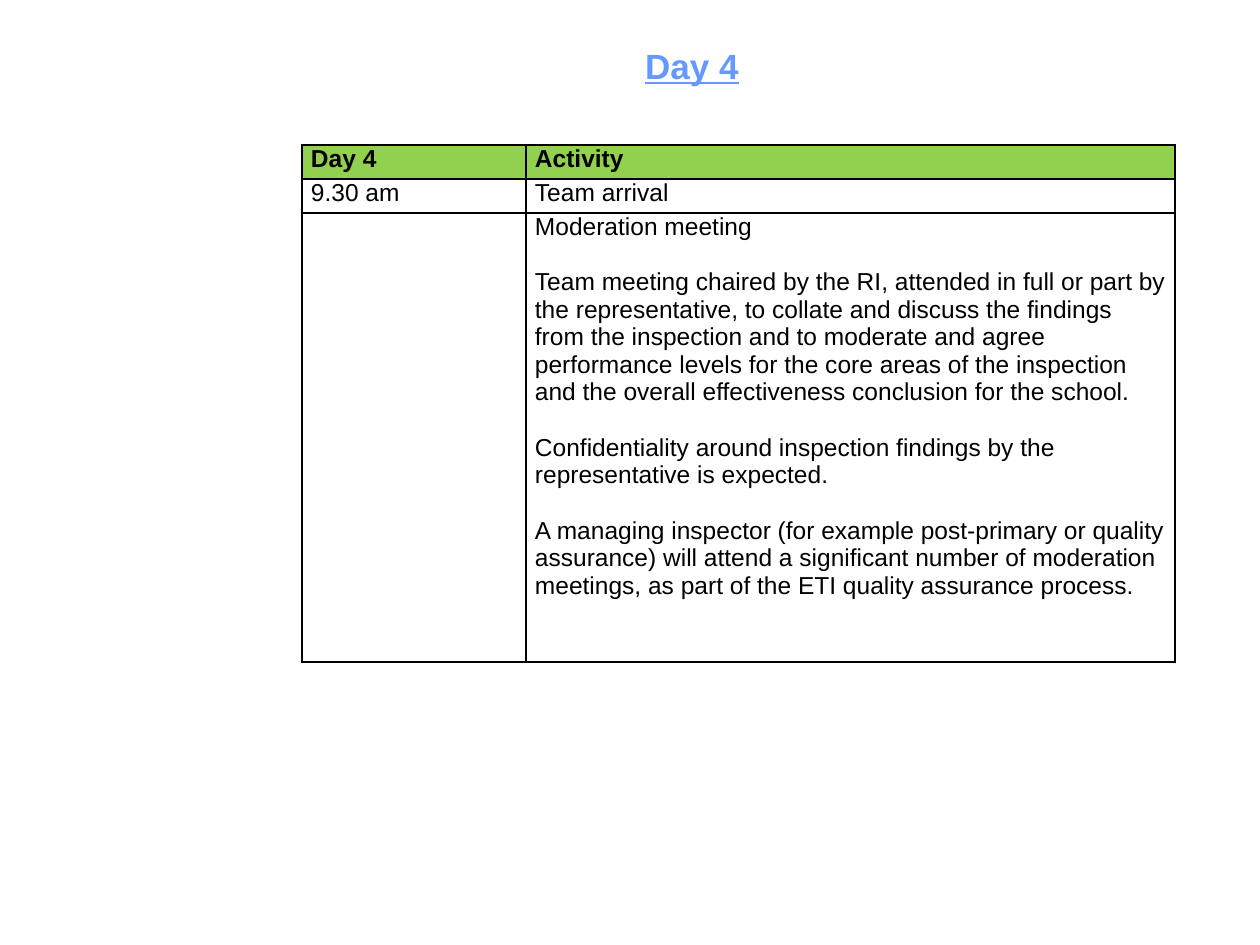
"""Build the Day 4 inspection timetable slide."""
import pptx
import pptx.dml.color
import pptx.enum.text
import pptx.oxml
import pptx.oxml.ns
import pptx.util

PX = 914400 // 126
TITLE = "Day 4"
TITLE_BOX = (241, 30, 902, 70)
TABLE_ORIGIN = (302, 145)
COLUMNS = (224, 649)
ROW_HEIGHTS = (34, 34, 449)
ROWS = [
    (["Day 4"], ["Activity"]),
    (["9.30 am"], ["Team arrival"]),
    ([], [
        "Moderation meeting",
        "Team meeting chaired by the RI, attended in full or part by the "
        "representative, to collate and discuss the findings from the "
        "inspection and to moderate and agree performance levels for the core "
        "areas of the inspection and the overall effectiveness conclusion for "
        "the school.",
        "Confidentiality around inspection findings by the representative is expected.",
        "A managing inspector (for example post-primary or quality assurance) "
        "will attend a significant number of moderation meetings, as part of "
        "the ETI quality assurance process.",
    ]),
]
TITLE_FORMAT = {"name": "Arial", "size": pptx.util.Pt(20), "bold": True, "underline": True}
CELL_FORMAT = {"name": "Arial", "size": pptx.util.Pt(14)}
CELL_MARGINS = {"margin_left": 9, "margin_top": 0, "margin_right": 9, "margin_bottom": 0}


def px(length):
    return pptx.util.Emu(length * PX)


def color(value):
    return pptx.dml.color.RGBColor.from_string(value)


def style(font, values, ink):
    for key, value in values.items():
        setattr(font, key, value)
    font.color.rgb = color(ink)


def add_borders(cell):
    properties = cell._tc.get_or_add_tcPr()
    for position, side in enumerate(("lnL", "lnR", "lnT", "lnB")):
        line = pptx.oxml.parse_xml(
            f'<a:{side} {pptx.oxml.ns.nsdecls("a")} w="12700"><a:solidFill>'
            f'<a:srgbClr val="000000"/></a:solidFill></a:{side}>')
        properties.insert(position, line)


def fill_cell(cell, texts, header):
    for key, value in CELL_MARGINS.items():
        setattr(cell, key, px(value))
    cell.fill.solid()
    cell.fill.fore_color.rgb = color("92D050" if header else "FFFFFF")
    add_borders(cell)
    for index, text in enumerate(texts):
        para = cell.text_frame.add_paragraph() if index else cell.text_frame.paragraphs[0]
        if index:
            para.space_before = pptx.util.Pt(16)
        span = para.add_run()
        span.text = text
        style(span.font, {**CELL_FORMAT, "bold": header}, "000000")


def add_title(page):
    title = page.shapes.title
    title.left, title.top, title.width, title.height = map(px, TITLE_BOX)
    title.text_frame.vertical_anchor = pptx.enum.text.MSO_ANCHOR.MIDDLE
    para = title.text_frame.paragraphs[0]
    para.alignment = pptx.enum.text.PP_ALIGN.CENTER
    span = para.add_run()
    span.text = TITLE
    style(span.font, TITLE_FORMAT, "6699FF")


def add_timetable(page):
    size = (sum(COLUMNS), sum(ROW_HEIGHTS))
    table = page.shapes.add_table(
        len(ROWS), len(COLUMNS), *map(px, TABLE_ORIGIN + size)).table
    for column, width in zip(table.columns, COLUMNS):
        column.width = px(width)
    for index, (row, height) in enumerate(zip(table.rows, ROW_HEIGHTS)):
        row.height = px(height)
        for cell, texts in zip(row.cells, ROWS[index]):
            fill_cell(cell, texts, index == 0)


def main():
    deck = pptx.Presentation()
    deck.slide_width, deck.slide_height = pptx.util.Inches(10), pptx.util.Inches(7.5)
    page = deck.slides.add_slide(deck.slide_layouts.get_by_name("Title Only"))
    add_title(page)
    add_timetable(page)
    deck.save("out.pptx")


if __name__ == "__main__":
    main()
